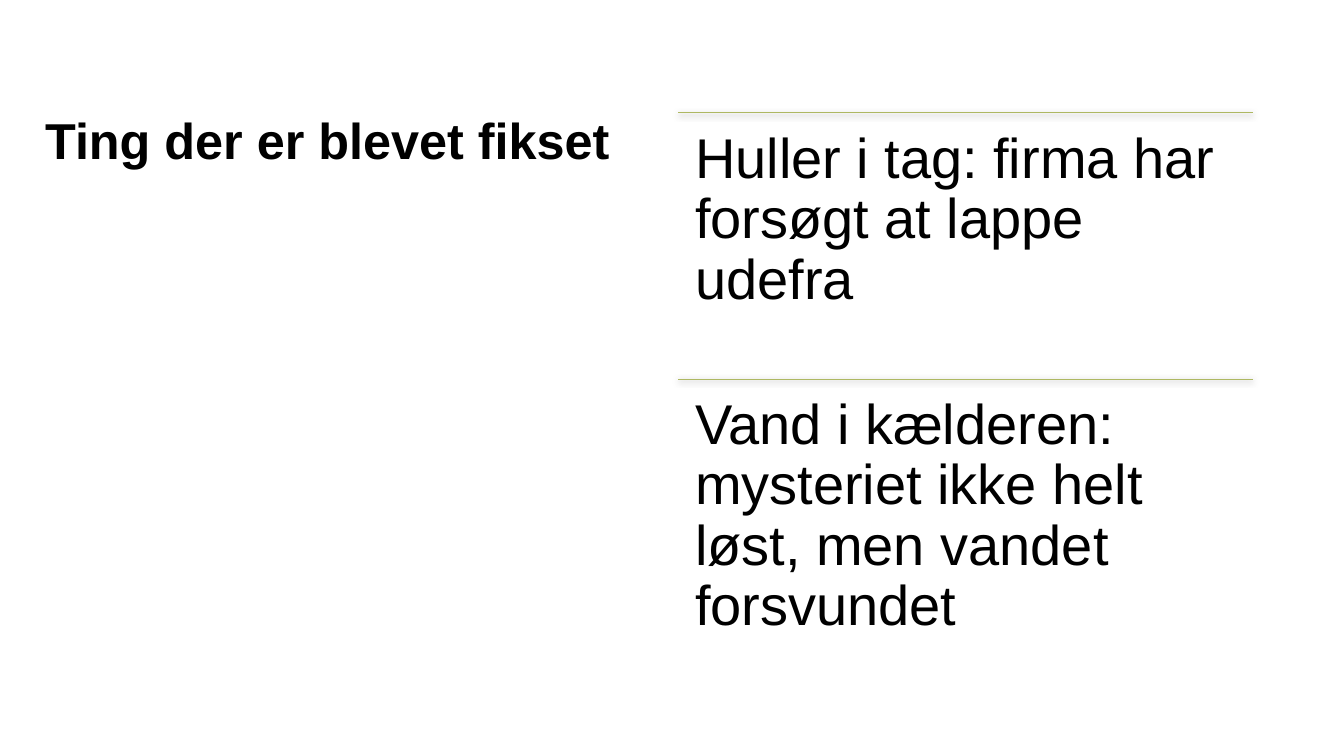
from dataclasses import dataclass

import lxml.etree
import pptx
import pptx.dml.color
import pptx.enum.shapes
import pptx.enum.text
import pptx.oxml
import pptx.oxml.ns
import pptx.slide
import pptx.util

Cm = pptx.util.Cm
Pt = pptx.util.Pt

BLACK = pptx.dml.color.RGBColor(0x00, 0x00, 0x00)
GREEN = pptx.dml.color.RGBColor(0xAE, 0xB8, 0x62)
FONT = "Arial"

TOP = 2.84
LEFT = 17.09
WIDTH = 14.49
STEP = 6.71

SHADOW = f"""<a:effectLst {pptx.oxml.ns.nsdecls("a")}>
  <a:outerShdw blurRad="{Pt(4.5)}" dist="{Pt(1.5)}" dir="5400000" rotWithShape="0">
    <a:srgbClr val="000000"><a:alpha val="63000"/></a:srgbClr>
  </a:outerShdw>
</a:effectLst>"""


@dataclass
class Block:
    text: str
    left: float
    top: float
    width: float
    height: float
    size: float
    inset: float = 0
    lines: float = 0.9
    after: float = 0
    bold: bool = False


def add_text(slide: pptx.slide.Slide, block: Block) -> None:
    box = slide.shapes.add_textbox(
        Cm(block.left), Cm(block.top), Cm(block.width), Cm(block.height))
    frame = box.text_frame
    frame.word_wrap = True
    frame.vertical_anchor = pptx.enum.text.MSO_ANCHOR.TOP
    frame.margin_left = frame.margin_right = Cm(block.inset)
    frame.margin_top = frame.margin_bottom = Cm(block.inset)
    frame.text = block.text
    para = frame.paragraphs[0]
    para.line_spacing = block.lines
    para.space_after = Pt(block.after)
    font = para.runs[0].font
    font.name = FONT
    font.size = Pt(block.size)
    font.bold = block.bold
    font.color.rgb = BLACK


def add_rule(slide: pptx.slide.Slide, top: float) -> None:
    """Draw the thin shadowed line above an item."""
    rule = slide.shapes.add_connector(
        pptx.enum.shapes.MSO_CONNECTOR.STRAIGHT,
        Cm(LEFT), Cm(top), Cm(LEFT + WIDTH), Cm(top))
    rule.line.color.rgb = GREEN
    rule.line.width = Pt(0.5)
    props = rule.element.find(pptx.oxml.ns.qn("p:spPr"))
    props.append(pptx.oxml.parse_xml(SHADOW))


def main() -> None:
    deck = pptx.Presentation()
    deck.slide_width = Cm(33.87)
    deck.slide_height = Cm(19.05)
    slide = deck.slides.add_slide(deck.slide_layouts[6])

    add_text(slide, Block("Ting der er blevet fikset", 1.14, TOP, 14.91, 5.23,
                          size=36, lines=0.97, bold=True))
    items = (
        "Huller i tag: firma har forsøgt at lappe udefra",
        "Vand i kælderen: mysteriet ikke helt løst, men vandet forsvundet",
    )
    for index, item in enumerate(items):
        top = TOP + index * STEP
        add_rule(slide, top)
        add_text(slide, Block(item, LEFT, top, WIDTH, STEP,
                              size=40, inset=0.43, after=14))
    deck.save("out.pptx")


if __name__ == "__main__":
    main()
